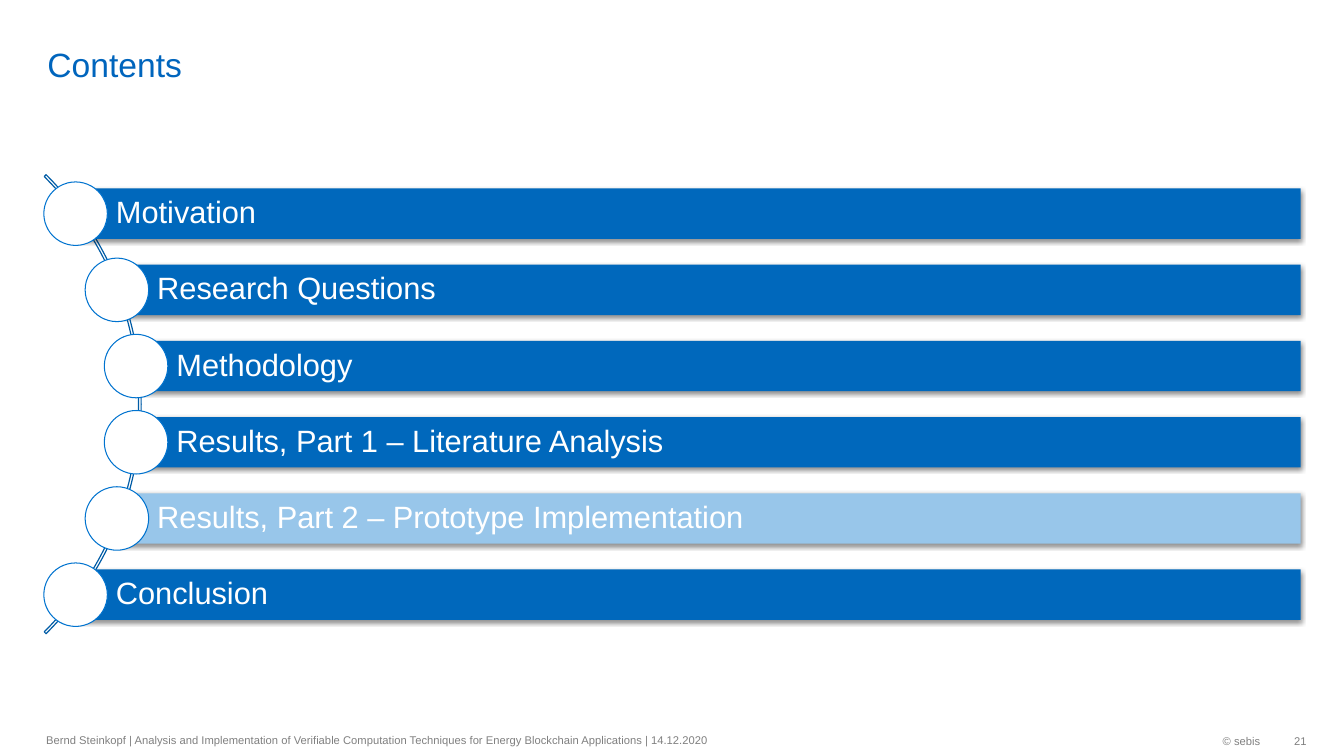
from dataclasses import dataclass
from lxml import etree
from pptx import Presentation
from pptx import util as u
from pptx.dml.color import RGBColor
from pptx.enum import shapes, text
from pptx.oxml import parse_xml


@dataclass(frozen=True)
class Theme:
    font: str = "Arial"
    title: str = "0065BD"
    bar: str = "0068BC"
    current: str = "98C6EA"
    arc: str = "005CA6"
    ring: str = "0073CF"
    white: str = "FFFFFF"
    grey: str = "808080"
    title_size: int = 24
    bar_size: int = 22
    footer_size: int = 8


theme = Theme()
color = RGBColor.from_string
SHADOW = """<a:outerShdw xmlns:a="http://schemas.openxmlformats.org/drawingml/2006/main"
  blurRad="44450" dist="13970" dir="5400000" algn="ctr" rotWithShape="0">
  <a:srgbClr val="000000"><a:alpha val="45000"/></a:srgbClr></a:outerShdw>"""


def write(box, words, size, ink, anchor=text.MSO_ANCHOR.MIDDLE, align=text.PP_ALIGN.LEFT,
          insets=(0.1, 0.05, 0.1, 0.05), spacing=1.0):
    frame = box.text_frame
    frame.word_wrap = True
    frame.auto_size = text.MSO_AUTO_SIZE.NONE
    frame.vertical_anchor = anchor
    (frame.margin_left, frame.margin_top,
     frame.margin_right, frame.margin_bottom) = map(u.Inches, insets)
    para = frame.paragraphs[0]
    para.alignment = align
    para.line_spacing = spacing
    span = para.add_run()
    span.text = words
    span.font.name = theme.font
    span.font.size = u.Pt(size)
    span.font.color.rgb = color(ink)


deck = Presentation()
deck.slide_width = u.Inches(13.33)
deck.slide_height = u.Inches(7.5)
page = deck.slides.add_slide(deck.slide_layouts[5])

title = page.shapes.title
title.left, title.top = u.Inches(0.37), u.Inches(0.05)
title.width, title.height = u.Inches(11.58), u.Inches(0.79)
write(title, "Contents", theme.title_size, theme.title,
      anchor=text.MSO_ANCHOR.BOTTOM, insets=(0.1, 0, 0.1, 0))

arc = page.shapes.add_shape(shapes.MSO_SHAPE.BLOCK_ARC, u.Inches(-5.04), u.Inches(0.79),
                            u.Inches(6.44), u.Inches(6.44))
for index, value in enumerate((189, 27, 0.004)):
    arc.adjustments[index] = value
arc.shadow.inherit = False
arc.fill.background()
arc.line.color.rgb = color(theme.arc)
arc.line.width = u.Pt(0.85)

chapters = [
    ("Motivation", 0.75, theme.bar),
    ("Research Questions", 1.16, theme.bar),
    ("Methodology", 1.35, theme.bar),
    ("Results, Part 1 – Literature Analysis", 1.35, theme.bar),
    ("Results, Part 2 – Prototype Implementation", 1.16, theme.current),
    ("Conclusion", 0.75, theme.bar),
]
first_middle, last_middle = 2.12, 5.9
step = (last_middle - first_middle) / (len(chapters) - 1)
bar_right, bar_height, diameter = 12.9, 0.5, 0.63

for index, (name, left, fill) in enumerate(chapters):
    middle = first_middle + index * step
    bar = page.shapes.add_shape(
        shapes.MSO_SHAPE.RECTANGLE, u.Inches(left), u.Inches(middle - bar_height / 2),
        u.Inches(bar_right - left), u.Inches(bar_height))
    bar.shadow.inherit = False
    bar._element.spPr.find("{*}effectLst").append(parse_xml(SHADOW))
    bar.fill.solid()
    bar.fill.fore_color.rgb = color(fill)
    bar.line.fill.background()
    write(bar, name, theme.bar_size, theme.white, insets=(0.4, 0.07, 0.07, 0.07), spacing=0.9)

    circle = page.shapes.add_shape(
        shapes.MSO_SHAPE.OVAL, u.Inches(left - diameter / 2), u.Inches(middle - diameter / 2),
        u.Inches(diameter), u.Inches(diameter))
    circle.shadow.inherit = False
    circle.fill.solid()
    circle.fill.fore_color.rgb = color(theme.white)
    circle.line.color.rgb = color(theme.ring)
    circle.line.width = u.Pt(0.75)

footers = [
    ("Bernd Steinkopf | Analysis and Implementation of Verifiable Computation Techniques "
     "for Energy Blockchain Applications | 14.12.2020",
     0.36, 7.18, 6.97, text.PP_ALIGN.LEFT, 0.1),
    ("© sebis", 10.26, 7.19, 2.34, text.PP_ALIGN.RIGHT, 0.1),
    ("21", 12.6, 7.19, 0.36, text.PP_ALIGN.RIGHT, 0),
]
for words, left, top, width, align, right_inset in footers:
    box = page.shapes.add_textbox(u.Inches(left), u.Inches(top), u.Inches(width), u.Inches(0.32))
    write(box, words, theme.footer_size, theme.grey, align=align,
          insets=(0.1, 0.05, right_inset, 0.05))

deck.save("out.pptx")
